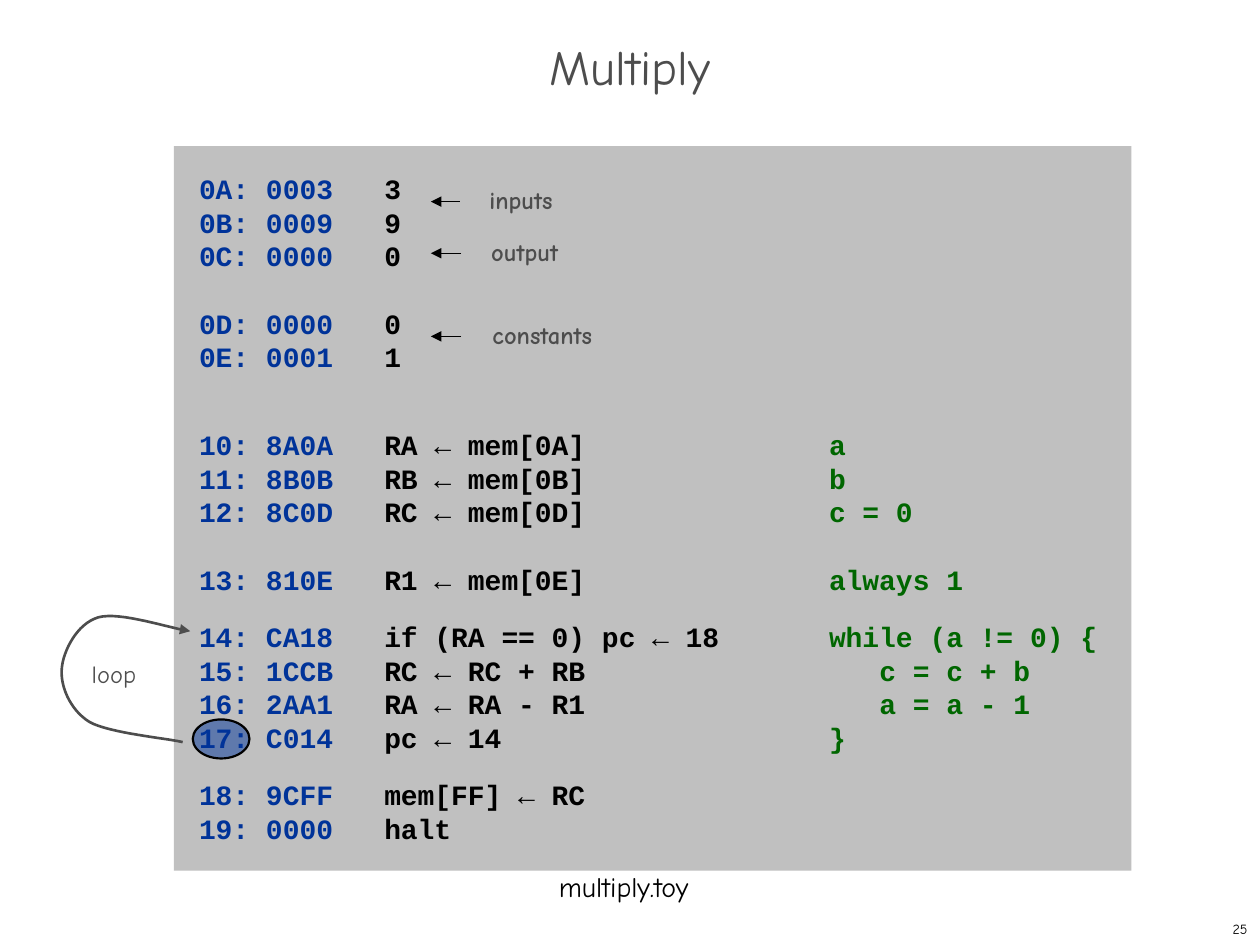
from lxml.etree import SubElement
from pptx import Presentation
from pptx.dml.color import RGBColor
from pptx.enum.shapes import MSO_CONNECTOR as Connector, MSO_SHAPE as Preset
from pptx.enum.text import MSO_ANCHOR as Anchor, PP_ALIGN as Align
from pptx.oxml.ns import qn
from pptx.util import Inches, Pt

BLACK, GREY, SILVER, BLUE, GREEN = "000000", "4D4D4D", "C0C0C0", "003399", "006600"
LINE_HEIGHT = 19.26
CODE_TABS = (1.47, 5, 5.4)
CURVE_STEPS = 16

# Each block: gap above it in lines, then rows of (memory word, code, comment).
PROGRAM = [
    (0, [("0A: 0003", "3", ""), ("0B: 0009", "9", ""), ("0C: 0000", "0", "")]),
    (1, [("0D: 0000", "0", ""), ("0E: 0001", "1", "")]),
    (1.6, [("10: 8A0A", "RA ← mem[0A]", "a"),
           ("11: 8B0B", "RB ← mem[0B]", "b"),
           ("12: 8C0D", "RC ← mem[0D]", "c = 0")]),
    (1, [("13: 810E", "R1 ← mem[0E]", "always 1")]),
    (0.7, [("14: CA18", "if (RA == 0) pc ← 18", "while (a != 0) {"),
           ("15: 1CCB", "RC ← RC + RB", "\tc = c + b"),
           ("16: 2AA1", "RA ← RA - R1", "\ta = a - 1"),
           ("17: C014", "pc ← 14", "}")]),
    (0.7, [("18: 9CFF", "mem[FF] ← RC", ""), ("19: 0000", "halt", "")]),
]
# Label, its left and top, then the arrow's start and height.
LABELS = [
    ("inputs", 2.95, 1.47, 3.65, 1.6),
    ("output", 2.98, 1.88, 3.66, 2.01),
    ("constants", 3.12, 2.54, 3.66, 2.67),
]
LOOP_START = (1.45, 5.89)
LOOP_CURVES = [
    ((1.33, 5.86), (0.87, 5.82), (0.71, 5.73)),
    ((0.55, 5.63), (0.48, 5.44), (0.49, 5.31)),
    ((0.5, 5.17), (0.61, 4.95), (0.78, 4.9)),
    ((0.95, 4.85), (1.36, 4.99), (1.51, 5.01)),
]


def color(code):
    return RGBColor.from_string(code)


def curve_points(start, curves):
    """Return points along a chain of cubic Bezier curves."""
    points = [start]
    for first, second, end in curves:
        for step in range(1, CURVE_STEPS + 1):
            t = step / CURVE_STEPS
            weights = ((1 - t) ** 3, 3 * t * (1 - t) ** 2, 3 * t * t * (1 - t), t ** 3)
            corners = zip(start, first, second, end)
            points.append(tuple(sum(w * c for w, c in zip(weights, axis))
                                for axis in corners))
        start = end
    return points


class SlideBuilder:
    font = "Comic Neue"
    code_font = "Courier New"

    def __init__(self, page):
        self.page = page

    def add_span(self, para, text, size, code, **style):
        span = para.add_run()
        span.text = text
        span.font.color.rgb = color(code)
        for name, value in {"name": self.font, "size": Pt(size), **style}.items():
            setattr(span.font, name, value)

    def set_frame(self, frame, inset=(0, 0), anchor=Anchor.TOP):
        across, down = (Inches(value) for value in inset)
        settings = {"margin_left": across, "margin_right": across, "margin_top": down,
                    "margin_bottom": down, "word_wrap": True, "vertical_anchor": anchor}
        for name, value in settings.items():
            setattr(frame, name, value)

    def add_title(self, text):
        title = self.page.shapes.title
        title.left, title.top, title.width, title.height = map(Inches, (0, 0.33, 10, 0.5))
        self.set_frame(title.text_frame, (0.1, 0.05), Anchor.MIDDLE)
        para = title.text_frame.paragraphs[0]
        para.alignment, para.line_spacing = Align.CENTER, 0.7
        self.add_span(para, text, 28, GREY)

    def add_text(self, text, place, size, code, align=Align.CENTER,
                 inset=(0, 0), anchor=Anchor.TOP, **style):
        box = self.page.shapes.add_textbox(*map(Inches, place))
        self.set_frame(box.text_frame, inset, anchor)
        para = box.text_frame.paragraphs[0]
        para.alignment = align
        self.add_span(para, text, size, code, **style)

    def add_preset(self, preset, place, fill):
        shape = self.page.shapes.add_shape(preset, *map(Inches, place))
        shape.shadow.inherit = False
        shape.fill.solid()
        shape.fill.fore_color.rgb = color(fill)
        shape.line.fill.background()
        return shape

    def add_listing(self, place, program):
        frame = self.add_preset(Preset.RECTANGLE, place, SILVER).text_frame
        self.set_frame(frame, (0.2, 0.2))
        para = frame.paragraphs[0]
        for gap, rows in program:
            for index, row in enumerate(rows):
                if para.runs:
                    para = frame.add_paragraph()
                self.add_row(para, row, 0 if index else gap)

    def add_row(self, para, row, gap):
        para.alignment = Align.LEFT
        para.line_spacing = Pt(LINE_HEIGHT)
        para.space_before = Pt(gap * LINE_HEIGHT)
        stops = SubElement(para._p.get_or_add_pPr(), qn("a:tabLst"))
        for stop in CODE_TABS:
            SubElement(stops, qn("a:tab"), pos=str(Inches(stop)), algn="l")
        word, code, comment = row
        style = {"name": self.code_font, "bold": True}
        self.add_span(para, word, 16, BLUE, **style)
        self.add_span(para, "\t" + code, 16, BLACK, **style)
        if comment:
            self.add_span(para, "\t" + comment, 16, GREEN, **style)

    def add_marker(self, place):
        """Add a half transparent ellipse with a black outline."""
        marker = self.add_preset(Preset.OVAL, place, BLUE)
        tint = marker.fill._xPr.find(".//" + qn("a:srgbClr"))
        SubElement(tint, qn("a:alpha"), val="50000")
        self.set_line(marker.line, BLACK, 1.25)

    def set_line(self, line, code, width):
        line.color.rgb = color(code)
        line.width = Pt(width)

    def add_head(self, line):
        SubElement(line._get_or_add_ln(), qn("a:tailEnd"), type="triangle")

    def add_arrow(self, start, end):
        arrow = self.page.shapes.add_connector(
            Connector.STRAIGHT, *map(Inches, start + end))
        self.set_line(arrow.line, BLACK, 0.75)
        self.add_head(arrow.line)
        SubElement(arrow._element.spPr, qn("a:effectLst"))

    def add_curve(self, start, curves):
        points = [tuple(map(Inches, point)) for point in curve_points(start, curves)]
        pen = self.page.shapes.build_freeform(*points[0])
        pen.add_line_segments(points[1:], close=False)
        curve = pen.convert_to_shape()
        curve.shadow.inherit = False
        curve.fill.background()
        self.set_line(curve.line, GREY, 1.5)
        self.add_head(curve.line)


def main():
    deck = Presentation()
    deck.slide_width, deck.slide_height = Inches(10), Inches(7.5)
    builder = SlideBuilder(deck.slides.add_slide(deck.slide_layouts[5]))
    builder.add_text("25", (7.92, 7.25, 2.08, 0.25), 8, BLACK, Align.RIGHT,
                     (0.1, 0.05), Anchor.MIDDLE)
    builder.add_listing((1.38, 1.16, 7.6, 5.75), PROGRAM)
    builder.add_title("Multiply")
    builder.add_text("loop", (0.63, 5.18, 0.83, 0.33), 14, GREY, Align.LEFT, (0.1, 0.05))
    builder.add_curve(LOOP_START, LOOP_CURVES)
    builder.add_marker((1.53, 5.71, 0.45, 0.31))
    for text, left, top, arrow_start, arrow_top in LABELS:
        builder.add_text(text, (left, top, 2.37, 0.23), 14, GREY, bold=True)
        builder.add_arrow((arrow_start, arrow_top), (3.42, arrow_top))
    builder.add_text("multiply.toy", (4.05, 6.9, 1.8, 0.27), 16, BLACK)
    deck.save("out.pptx")


if __name__ == "__main__":
    main()
